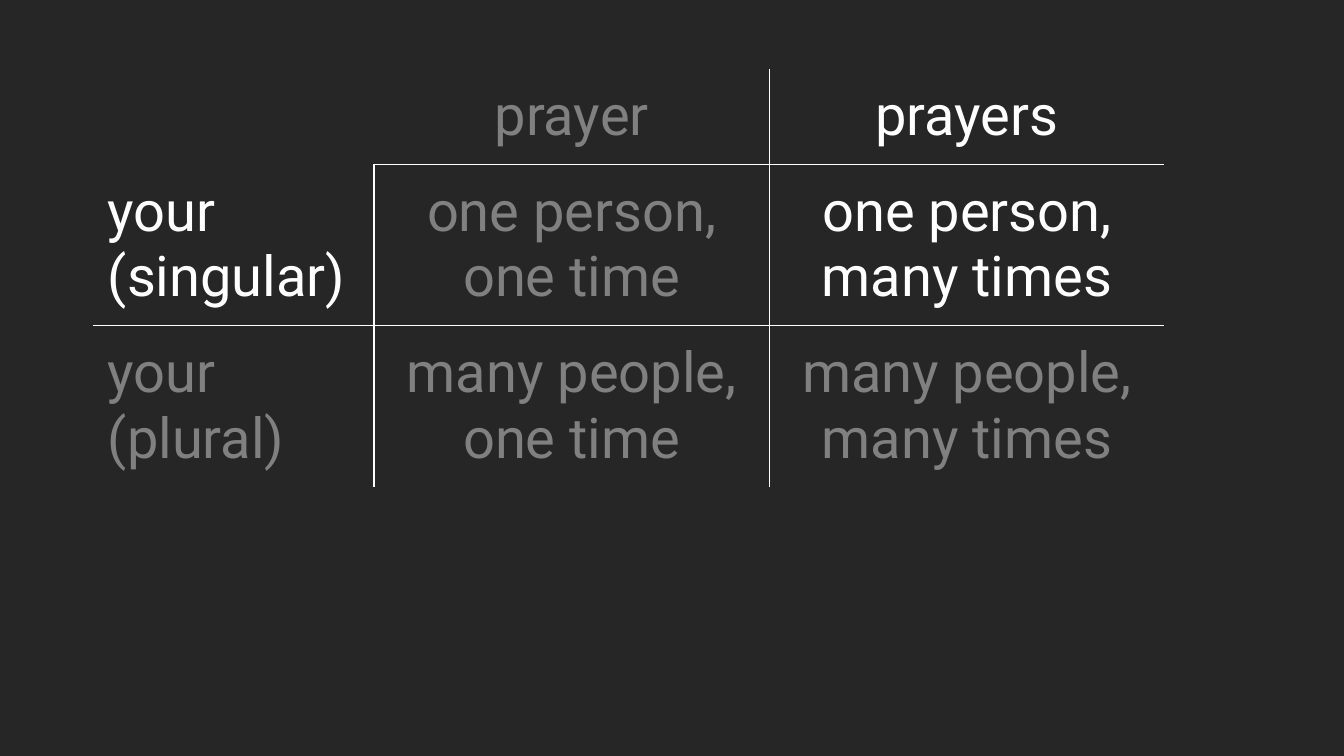
from lxml.etree import SubElement
from pptx import Presentation
from pptx.dml.color import RGBColor
from pptx.enum.text import PP_ALIGN
from pptx.oxml.ns import qn
from pptx.util import Inches, Pt

BACKGROUND = RGBColor(0x26, 0x26, 0x26)
WHITE = RGBColor(0xFF, 0xFF, 0xFF)
GRAY = RGBColor(0x80, 0x80, 0x80)

prs = Presentation()
prs.slide_width, prs.slide_height = Inches(13.33), Inches(7.5)
s = prs.slides.add_slide(prs.slide_layouts[6])
s.background.fill.solid()
s.background.fill.fore_color.rgb = BACKGROUND

# Text and colour of each cell
rows = [
    [("", WHITE), ("prayer", GRAY), ("prayers", WHITE)],
    [("your\n(singular)", WHITE), ("one person,\none time", GRAY),
     ("one person,\nmany times", WHITE)],
    [("your\n(plural)", GRAY), ("many people,\none time", GRAY),
     ("many people,\nmany times", GRAY)],
]


def add_border(cell, side, visible):
    ln = SubElement(cell._tc.get_or_add_tcPr(), qn("a:ln" + side), w=str(Pt(1)))
    if visible:
        fill = SubElement(ln, qn("a:solidFill"))
        SubElement(fill, qn("a:srgbClr"), val=str(WHITE))
    else:
        SubElement(ln, qn("a:noFill"))


# Table without banding
table = s.shapes.add_table(3, 3, Inches(0.92), Inches(0.68),
                           Inches(10.63), Inches(4.14)).table
table.first_row = table.horz_banding = False
for column, width in zip(table.columns, (2.79, 3.92, 3.92)):
    column.width = Inches(width)
for row, height in zip(table.rows, (0.94, 1.6, 1.6)):
    row.height = Inches(height)

for i, row in enumerate(rows):
    for j, (text, color) in enumerate(row):
        cell = table.cell(i, j)
        cell.margin_left = cell.margin_right = Inches(0.15)
        cell.margin_top = cell.margin_bottom = Inches(0.15)

        # Inner rules only, leaving the top-left corner cell open
        corner = i == 0 and j == 0
        add_border(cell, "L", j == 2 or (j == 1 and i > 0))
        add_border(cell, "R", j < 2 and not corner)
        add_border(cell, "T", i == 2 or (i == 1 and j > 0))
        add_border(cell, "B", i < 2 and not corner)
        cell.fill.background()

        # Cell text, with line breaks inside one paragraph
        p = cell.text_frame.paragraphs[0]
        p.alignment = PP_ALIGN.CENTER if j else PP_ALIGN.LEFT
        if not text:
            continue
        for k, line in enumerate(text.split("\n")):
            if k:
                p.add_line_break()
            r = p.add_run()
            r.text = line
            r.font.name = "Roboto"
            r.font.size = Pt(40)
            r.font.color.rgb = color

prs.save("out.pptx")
